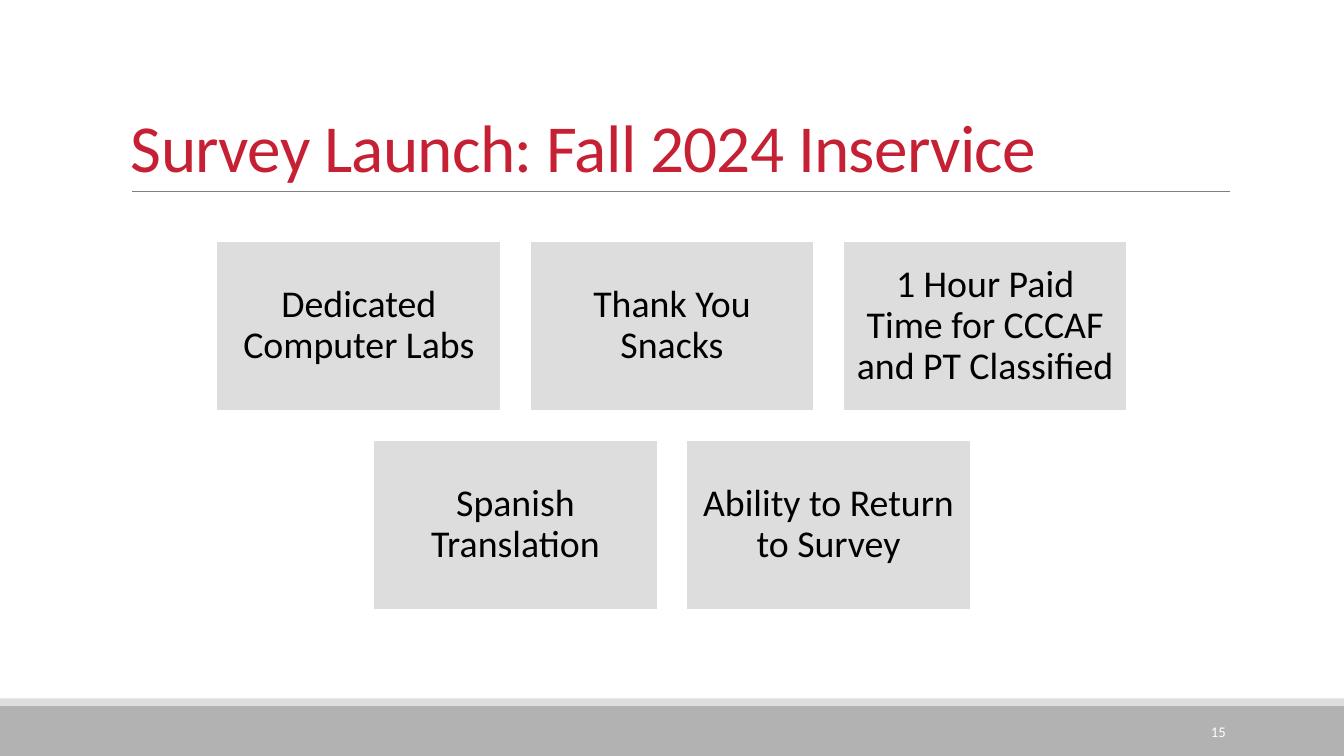
import pptx
import pptx.util
import pptx.dml.color
import pptx.enum.shapes
import pptx.enum.text
import pptx.oxml
from pptx.util import Cm

RED = pptx.dml.color.RGBColor(0xC5, 0x20, 0x33)
BLACK = pptx.dml.color.RGBColor(0, 0, 0)
WHITE = pptx.dml.color.RGBColor(0xFF, 0xFF, 0xFF)
LIGHT_GRAY = pptx.dml.color.RGBColor(0xDD, 0xDD, 0xDD)
FOOTER_GRAY = pptx.dml.color.RGBColor(0xB2, 0xB2, 0xB2)
RULE_GRAY = pptx.dml.color.RGBColor(0x80, 0x80, 0x80)

SLIDE_WIDTH, SLIDE_HEIGHT = 33.87, 19.05
CARD_WIDTH, CARD_HEIGHT, CARD_GAP = 7.17, 4.29, 0.72
CARDS_TOP = 6.07
CARD_ROWS = [
    ["Dedicated Computer Labs", "Thank You Snacks",
     "1 Hour Paid Time for CCCAF and PT Classified"],
    ["Spanish Translation", "Ability to Return to Survey"],
]

ALIGN = pptx.enum.text.PP_ALIGN
ANCHOR = pptx.enum.text.MSO_ANCHOR


class SlideBuilder:
    font_name = "Calibri"

    def __init__(self, slide):
        self.slide = slide

    def set_text(self, frame, text, size, color, align, anchor, line_spacing=1.0):
        frame.word_wrap = True
        frame.vertical_anchor = anchor
        frame.text = text
        paragraph = frame.paragraphs[0]
        paragraph.alignment = align
        paragraph.line_spacing = line_spacing
        run = paragraph.runs[0]
        run.font.name = self.font_name
        run.font.size = pptx.util.Pt(size)
        run.font.color.rgb = color
        return run

    def text(self, left, top, width, height, *content):
        box = self.slide.shapes.add_textbox(Cm(left), Cm(top), Cm(width), Cm(height))
        return self.set_text(box.text_frame, *content)

    def rectangle(self, left, top, width, height, fill):
        block = self.slide.shapes.add_shape(
            pptx.enum.shapes.MSO_SHAPE.RECTANGLE,
            Cm(left), Cm(top), Cm(width), Cm(height))
        block.shadow.inherit = False
        block.fill.solid()
        block.fill.fore_color.rgb = fill
        block.line.fill.background()
        return block

    def card(self, left, top, text):
        card = self.rectangle(left, top, CARD_WIDTH, CARD_HEIGHT, LIGHT_GRAY)
        card.line.color.rgb = WHITE
        card.line.width = pptx.util.Pt(1.25)
        frame = card.text_frame
        frame.margin_left = frame.margin_right = Cm(0.28)
        frame.margin_top = frame.margin_bottom = Cm(0.28)
        self.set_text(frame, text, 27, BLACK, ALIGN.CENTER, ANCHOR.MIDDLE, 0.9)

    def rule(self, left, right, y):
        rule = self.slide.shapes.add_connector(
            pptx.enum.shapes.MSO_CONNECTOR.STRAIGHT, Cm(left), Cm(y), Cm(right), Cm(y))
        rule.line.color.rgb = RULE_GRAY
        rule.line.width = pptx.util.Pt(0.5)
        properties = rule._element.spPr
        properties.append(pptx.oxml.parse_xml(
            '<a:effectLst xmlns:a="http://schemas.openxmlformats.org/drawingml/2006/main"/>'))


def main():
    deck = pptx.Presentation()
    deck.slide_width, deck.slide_height = Cm(SLIDE_WIDTH), Cm(SLIDE_HEIGHT)
    builder = SlideBuilder(deck.slides.add_slide(deck.slide_layouts[6]))

    builder.rectangle(0, 17.78, SLIDE_WIDTH, 1.27, FOOTER_GRAY)
    builder.rectangle(0, 17.6, SLIDE_WIDTH, 0.18, LIGHT_GRAY)
    builder.rule(3.33, 31, 4.82)

    title = builder.text(3.05, 0.79, 27.94, 4.03, "Survey Launch: Fall 2024 Inservice",
                         48, RED, ALIGN.LEFT, ANCHOR.BOTTOM, 0.85)
    title._r.get_or_add_rPr().set("spc", "-50")
    builder.text(27.51, 17.93, 3.63, 1.02, "15", 10.5, WHITE, ALIGN.RIGHT, ANCHOR.MIDDLE)

    for row, labels in enumerate(CARD_ROWS):
        row_width = len(labels) * (CARD_WIDTH + CARD_GAP) - CARD_GAP
        row_left = (SLIDE_WIDTH - row_width) / 2
        top = CARDS_TOP + row * (CARD_HEIGHT + CARD_GAP)
        for column, label in enumerate(labels):
            builder.card(row_left + column * (CARD_WIDTH + CARD_GAP), top, label)

    deck.save("out.pptx")


if __name__ == "__main__":
    main()
